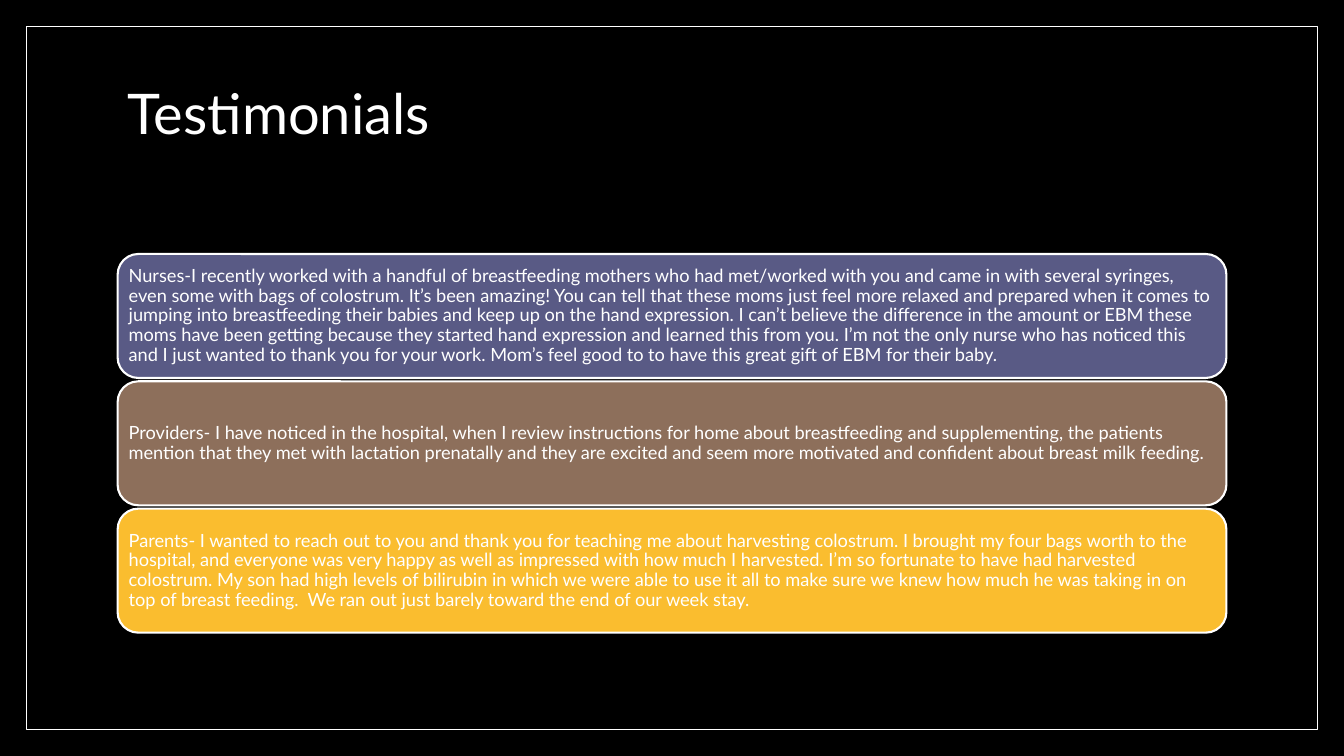
from pptx import Presentation
from pptx.dml.color import RGBColor
from pptx.enum.shapes import MSO_SHAPE
from pptx.enum.text import MSO_ANCHOR, PP_ALIGN
from pptx.util import Inches, Pt

RECT, ROUND = MSO_SHAPE.RECTANGLE, MSO_SHAPE.ROUNDED_RECTANGLE
TOP, MID, LEFT = MSO_ANCHOR.TOP, MSO_ANCHOR.MIDDLE, PP_ALIGN.LEFT
TITLE_ONLY = 5
COLS, ROWS = 80, 45  # square grid, six cells to the inch

HEX = {
    "back": "000000",
    "white": "FFFFFF",
    "nurse": "595A85",
    "doctor": "8D6F5B",
    "parent": "FABD2F",
}

QUOTES = [
    ("nurse", "Nurses-I recently worked with a handful of breastfeeding mothers "
     "who had met/worked with you and came in with several syringes, even some "
     "with bags of colostrum. It’s been amazing! You can tell that these moms "
     "just feel more relaxed and prepared when it comes to jumping into "
     "breastfeeding their babies and keep up on the hand expression. I can’t "
     "believe the difference in the amount or EBM these moms have been getting "
     "because they started hand expression and learned this from you. I’m not "
     "the only nurse who has noticed this and I just wanted to thank you for "
     "your work. Mom’s feel good to to have this great gift of EBM for their baby."),
    ("doctor", "Providers- I have noticed in the hospital, when I review "
     "instructions for home about breastfeeding and supplementing, the patients "
     "mention that they met with lactation prenatally and they are excited and "
     "seem more motivated and confident about breast milk feeding."),
    ("parent", "Parents- I wanted to reach out to you and thank you for teaching "
     "me about harvesting colostrum. I brought my four bags worth to the "
     "hospital, and everyone was very happy as well as impressed with how much "
     "I harvested. I’m so fortunate to have had harvested colostrum. My son had "
     "high levels of bilirubin in which we were able to use it all to make sure "
     "we knew how much he was taking in on top of breast feeding.  We ran out "
     "just barely toward the end of our week stay."),
]


def color(name):
    return RGBColor.from_string(HEX[name])


def write(shape, text, size=13, font="Lato", ink="white", anchor=MID,
          side=0.05, top=0.05):
    frame = shape.text_frame
    frame.word_wrap = True
    frame.vertical_anchor = anchor
    frame.margin_left = frame.margin_right = Inches(side)
    frame.margin_top = frame.margin_bottom = Inches(top)
    para = frame.paragraphs[0]
    para.alignment = LEFT
    para.line_spacing = 0.9
    run = para.add_run()
    run.text = text
    run.font.name = font
    run.font.size = Pt(size)
    run.font.color.rgb = color(ink)


class Deck:
    def __init__(self, wide, high):
        self.prs = Presentation()
        self.prs.slide_width = Inches(wide)
        self.prs.slide_height = Inches(high)
        self.slide = self.prs.slides.add_slide(self.prs.slide_layouts[TITLE_ONLY])
        fill = self.slide.background.fill
        fill.solid()
        fill.fore_color.rgb = color("back")

    def area(self, col, row, wide, high):
        x, y = self.prs.slide_width / COLS, self.prs.slide_height / ROWS
        return [round(n) for n in (col * x, row * y, wide * x, high * y)]

    def title(self, text, *cells):
        head = self.slide.shapes.title
        head.left, head.top, head.width, head.height = self.area(*cells)
        write(head, text, size=40, anchor=TOP, side=0.1, top=0.15)

    def box(self, kind, *cells, fill=None, width=1.5):
        shape = self.slide.shapes.add_shape(kind, *self.area(*cells))
        shape.shadow.inherit = False
        if fill:
            shape.fill.solid()
            shape.fill.fore_color.rgb = color(fill)
        else:
            shape.fill.background()
        shape.line.color.rgb = color("white")
        shape.line.width = Pt(width)
        return shape


def main():
    deck = Deck(13.33, 7.5)

    # Title and thin frame
    deck.title("Testimonials", 7, 4.2, 66, 9)
    edge = 1.56
    deck.box(RECT, edge, edge, COLS - 2 * edge, ROWS - 2 * edge, width=0.5)

    # Stack of quotes
    first, step, high = 15.12, 7.58, 7.38
    for i, (fill, text) in enumerate(QUOTES):
        card = deck.box(ROUND, 7, first + i * step, 66, high, fill=fill)
        write(card, text)

    deck.prs.save("out.pptx")


if __name__ == "__main__":
    main()
